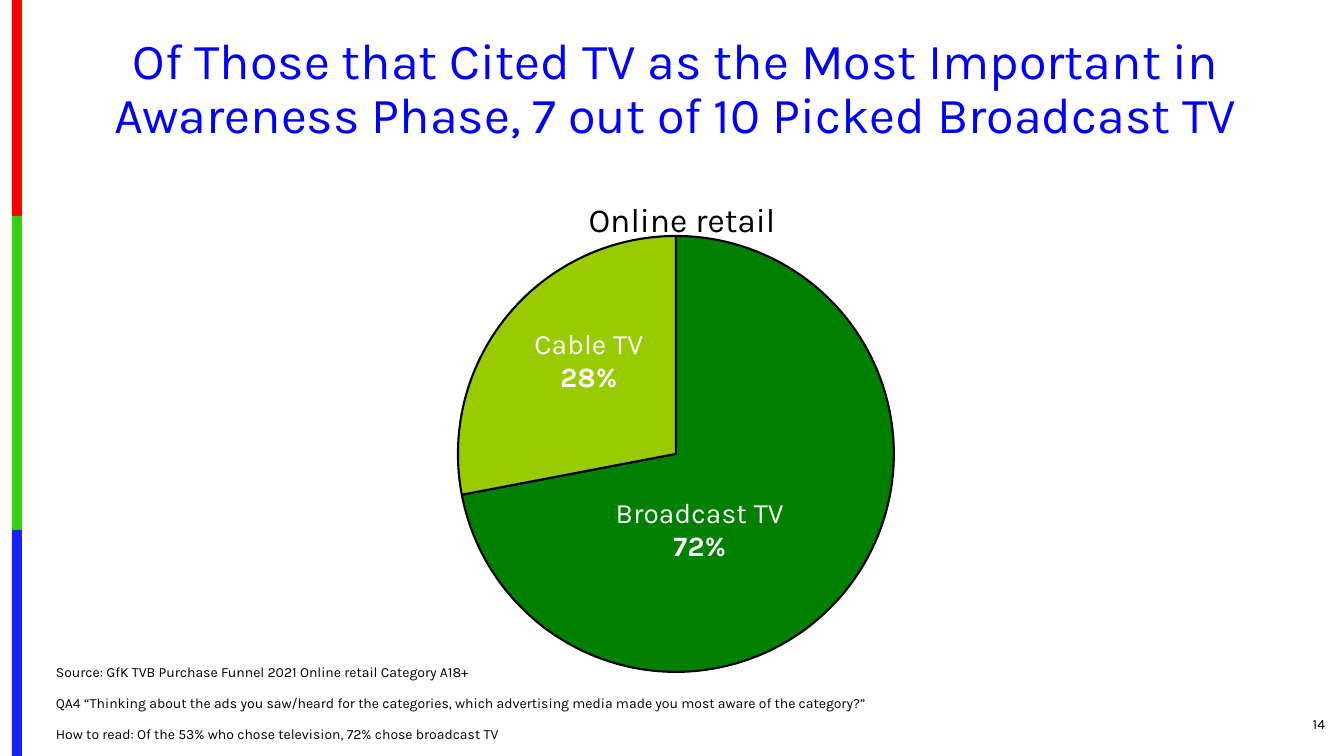
from lxml.etree import SubElement
from pptx import Presentation
from pptx.chart.data import CategoryChartData
from pptx.dml.color import RGBColor
from pptx.enum.chart import XL_CHART_TYPE, XL_LABEL_POSITION
from pptx.enum.shapes import MSO_SHAPE
from pptx.enum.text import MSO_ANCHOR, PP_ALIGN
from pptx.oxml import parse_xml
from pptx.oxml.ns import nsdecls, qn
from pptx.util import Emu, Pt

PX = 914400 / 100.8
FONT = "Karla"
RED = RGBColor(0xFE, 0x00, 0x00)
GREEN = RGBColor(0x36, 0xCF, 0x12)
BLUE = RGBColor(0x13, 0x22, 0xFE)
TITLE_BLUE = RGBColor(0x00, 0x00, 0xFF)
DARK_GREEN = RGBColor(0x00, 0x80, 0x00)
LIME = RGBColor(0x99, 0xCC, 0x00)
BLACK = RGBColor(0x00, 0x00, 0x00)
WHITE = RGBColor(0xFF, 0xFF, 0xFF)

NOTES = [
    "Source: GfK TVB Purchase Funnel 2021 Online retail Category A18+",
    "QA4 “Thinking about the ads you saw/heard for the categories, "
    "which advertising media made you most aware of the category?”",
    "How to read: Of the 53% who chose television, 72% chose broadcast TV",
]
# category, share, colour, label offset in px from the slice centre
SLICES = [
    ("Broadcast TV", 0.72, DARK_GREEN, (-60, 7)),
    ("Cable TV", 0.28, LIME, (-3, -23)),
]
CHART_WIDTH, CHART_HEIGHT = 1272, 516


def px(*lengths):
    return [Emu(round(length * PX)) for length in lengths]


def set_values(target, values):
    for name, value in values.items():
        setattr(target, name, value)


def set_font(font, size, color, bold=False):
    set_values(font, {"name": FONT, "size": Pt(size), "bold": bold})
    font.color.rgb = color


def add_bar(page, top, bottom, color):
    bar = page.shapes.add_shape(MSO_SHAPE.RECTANGLE, *px(12, top, 10, bottom - top))
    bar.shadow.inherit = False
    bar.fill.solid()
    bar.fill.fore_color.rgb = color
    bar.line.fill.background()


def add_text(page, place, lines, size, color, anchor=MSO_ANCHOR.TOP, hanging=0, **layout):
    """Add a text box; hanging is the indent in px, layout holds paragraph values."""
    frame = page.shapes.add_textbox(*px(*place)).text_frame
    frame.word_wrap = True
    frame.vertical_anchor = anchor
    for index, line in enumerate(lines):
        para = frame.paragraphs[0] if index == 0 else frame.add_paragraph()
        if hanging:
            indent = px(hanging)[0]
            properties = para._p.get_or_add_pPr()
            properties.set("marL", str(indent))
            properties.set("indent", str(-indent))
        if index:
            para.space_before = Pt(10)
        set_values(para, layout)
        span = para.add_run()
        span.text = line
        set_font(span.font, size, color)


def manual_layout(x, y, size=None, **modes):
    """Place a chart part, with lengths in px of the chart."""
    layout = parse_xml(f"<c:layout {nsdecls('c')}><c:manualLayout/></c:layout>")
    values = {**modes, "x": x / CHART_WIDTH, "y": y / CHART_HEIGHT}
    if size:
        values.update(w=size / CHART_WIDTH, h=size / CHART_HEIGHT)
    for name, value in values.items():
        SubElement(layout[0], qn(f"c:{name}"), val=str(value))
    return layout


def add_slice_label(point, category, share, offset):
    label = point.data_label
    frame = label.text_frame
    for index, text in enumerate((category, f"{share:.0%}")):
        para = frame.paragraphs[0] if index == 0 else frame.add_paragraph()
        span = para.add_run()
        span.text = text
        set_font(span.font, 20, WHITE, bold=index == 1)
    label.position = XL_LABEL_POSITION.CENTER
    rich_text = frame._txBody.getparent()
    rich_text.addprevious(manual_layout(*offset))
    rich_text.getparent().find(qn("c:showCatName")).set("val", "1")


def add_pie(page):
    data = CategoryChartData(number_format="0%")
    data.categories = [category for category, *_ in SLICES]
    data.add_series("Series 1", [share for _, share, *_ in SLICES])
    chart = page.shapes.add_chart(
        XL_CHART_TYPE.PIE, *px(46, 176, CHART_WIDTH, CHART_HEIGHT), data).chart
    chart.has_legend = False
    set_font(chart.font, 10, BLACK)

    title = chart.chart_title
    title.include_in_layout = False
    span = title.text_frame.paragraphs[0].add_run()
    span.text = "Online retail"
    set_font(span.font, 24, BLACK)
    title_layout = manual_layout(548, 26, xMode="edge", yMode="edge")
    title._element.find(qn("c:tx")).addnext(title_layout)

    plot = chart.plots[0]
    plot.vary_by_categories = True
    area = plot._element.getparent()
    for old in area.findall(qn("c:layout")):
        area.remove(old)
    area.insert(0, manual_layout(
        412, 60, size=436, layoutTarget="inner", xMode="edge", yMode="edge"))

    series = plot.series[0]
    labels = series.data_labels
    set_values(labels, {
        "show_value": True, "show_category_name": True, "show_percentage": False,
        "number_format": "0%", "number_format_is_linked": False,
    })
    set_font(labels.font, 20, WHITE)
    for index, (category, share, color, offset) in enumerate(SLICES):
        point = series.points[index]
        point.format.fill.solid()
        point.format.fill.fore_color.rgb = color
        point.format.line.color.rgb = BLACK
        point.format.line.width = Pt(1.5)
        add_slice_label(point, category, share, offset)


def main():
    deck = Presentation()
    deck.slide_width, deck.slide_height = px(1344, 756)
    page = deck.slides.add_slide(deck.slide_layouts[6])

    edges = [0, 216, 530, 756]
    for top, bottom, color in zip(edges, edges[1:], (RED, GREEN, BLUE)):
        add_bar(page, top, bottom, color)

    add_text(page, (33, 31, 1286, 120),
             ["Of Those that Cited TV as the Most Important in "
              "Awareness Phase, 7 out of 10 Picked Broadcast TV"],
             36, TITLE_BLUE, alignment=PP_ALIGN.CENTER, line_spacing=0.9)
    add_text(page, (1226, 704, 109, 40), ["14"], 10, BLACK,
             MSO_ANCHOR.MIDDLE, alignment=PP_ALIGN.RIGHT)
    add_text(page, (46, 662, 1054, 85), NOTES, 10, BLACK,
             MSO_ANCHOR.BOTTOM, hanging=51)
    add_pie(page)
    deck.save("out.pptx")


if __name__ == "__main__":
    main()
